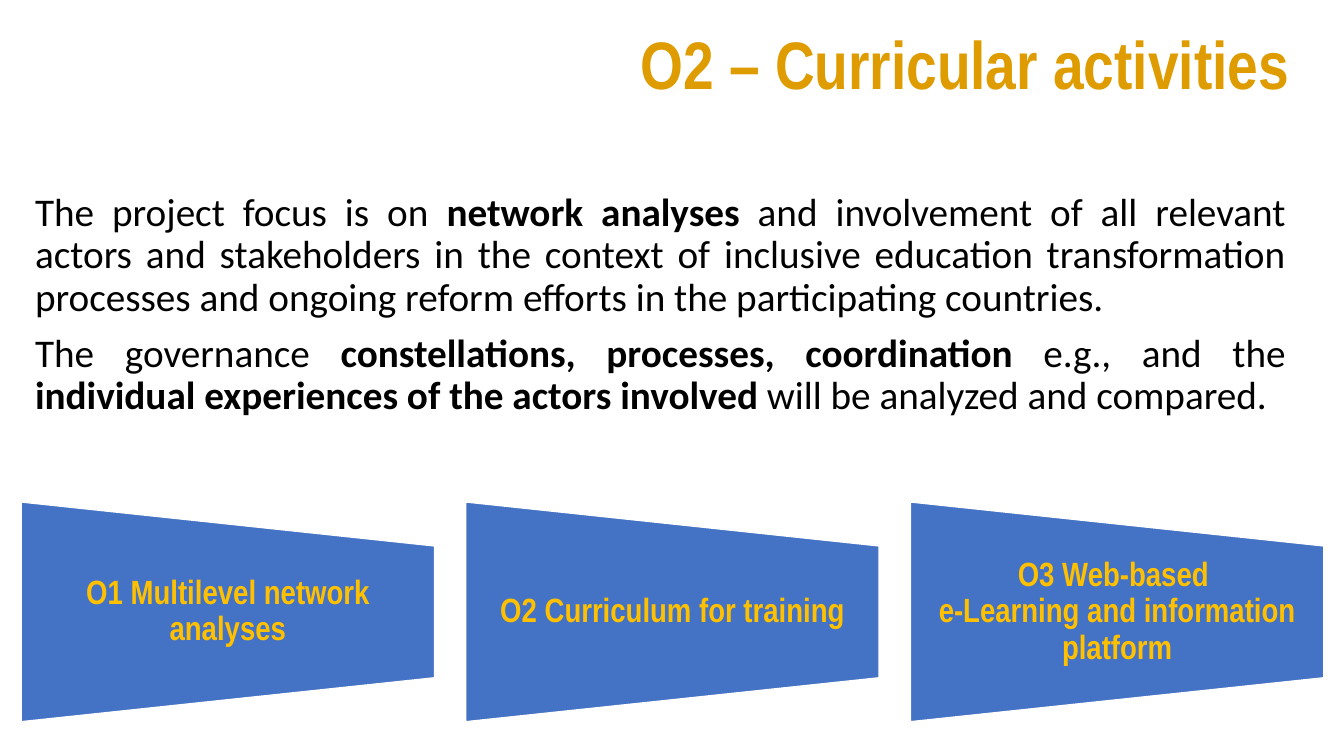
from pptx import Presentation
from pptx.dml.color import RGBColor
from pptx.enum.shapes import MSO_SHAPE
from pptx.enum.text import MSO_ANCHOR, PP_ALIGN
from pptx.util import Inches, Pt

NARROW = "Arial Narrow"

# Each paragraph is a list of (text, bold) runs
BODY = [
    [("The project focus is on ", False),
     ("network analyses ", True),
     ("and involvement of all relevant actors and stakeholders in the context of "
      "inclusive education transformation processes and ongoing reform efforts in "
      "the participating countries. ", False)],
    [("The governance ", False),
     ("constellations, processes, coordination ", True),
     ("e.g., and the ", False),
     ("individual experiences of the actors involved ", True),
     ("will be analyzed and compared.", False)],
]

# Each output is a list of lines
OUTPUTS = [
    ["O1 Multilevel network analyses"],
    ["O2 Curriculum for training"],
    ["O3 Web-based ", "e-Learning and information platform"],
]


def rgb(value):
    return RGBColor.from_string(value)


def add_box(s, left, top, width, height):
    box = s.shapes.add_textbox(Inches(left), Inches(top), Inches(width), Inches(height))
    tf = box.text_frame
    tf.word_wrap = True
    return tf


def format_paragraph(p, align):
    p.alignment = align
    p.line_spacing = 0.9


def add_run(p, text, font, size, color, bold):
    r = p.add_run()
    r.text = text
    r.font.name = font
    r.font.size = Pt(size)
    r.font.bold = bold
    r.font.color.rgb = rgb(color)


def add_title(s, text):
    p = add_box(s, 0.29, 0.26, 12.6, 1.45).paragraphs[0]
    format_paragraph(p, PP_ALIGN.RIGHT)
    add_run(p, text, NARROW, 48, "DE9C00", True)


def add_body(s, paragraphs):
    tf = add_box(s, 0.25, 1.86, 12.6, 3.19)
    for i, runs in enumerate(paragraphs):
        p = tf.add_paragraph() if i else tf.paragraphs[0]
        format_paragraph(p, PP_ALIGN.JUSTIFY)
        p.space_before = Pt(10 if i else 0)
        for text, bold in runs:
            add_run(p, text, "Calibri", 28, "000000", bold)


def add_output(s, left, lines):
    width, height, middle = 4.1, 2.18, 6.07

    # Trapezoid, turned so that its wide side faces left
    sp = s.shapes.add_shape(
        MSO_SHAPE.FLOWCHART_MANUAL_OPERATION,
        Inches(left + (width - height) / 2), Inches(middle - width / 2),
        Inches(height), Inches(width))
    sp.rotation = 270
    sp.shadow.inherit = False
    sp.fill.solid()
    sp.fill.fore_color.rgb = rgb("4472C4")
    sp.line.color.rgb = rgb("FFFFFF")
    sp.line.width = Pt(1)

    # Upright label
    tf = add_box(s, left, middle - 0.65, width, 1.3)
    tf.vertical_anchor = MSO_ANCHOR.MIDDLE
    tf.margin_left = tf.margin_right = Inches(0.17)
    tf.margin_top = tf.margin_bottom = 0
    p = tf.paragraphs[0]
    format_paragraph(p, PP_ALIGN.CENTER)
    for i, line in enumerate(lines):
        if i:
            p.add_line_break()
        add_run(p, line, NARROW, 24, "FFC000", True)


def main():
    prs = Presentation()
    prs.slide_width = Inches(13.33)
    prs.slide_height = Inches(7.5)
    s = prs.slides.add_slide(prs.slide_layouts[6])

    add_title(s, "O2 – Curricular activities")
    add_body(s, BODY)

    # Row of project outputs
    for i, lines in enumerate(OUTPUTS):
        add_output(s, 0.21 + i * 4.41, lines)

    prs.save("out.pptx")


if __name__ == "__main__":
    main()
